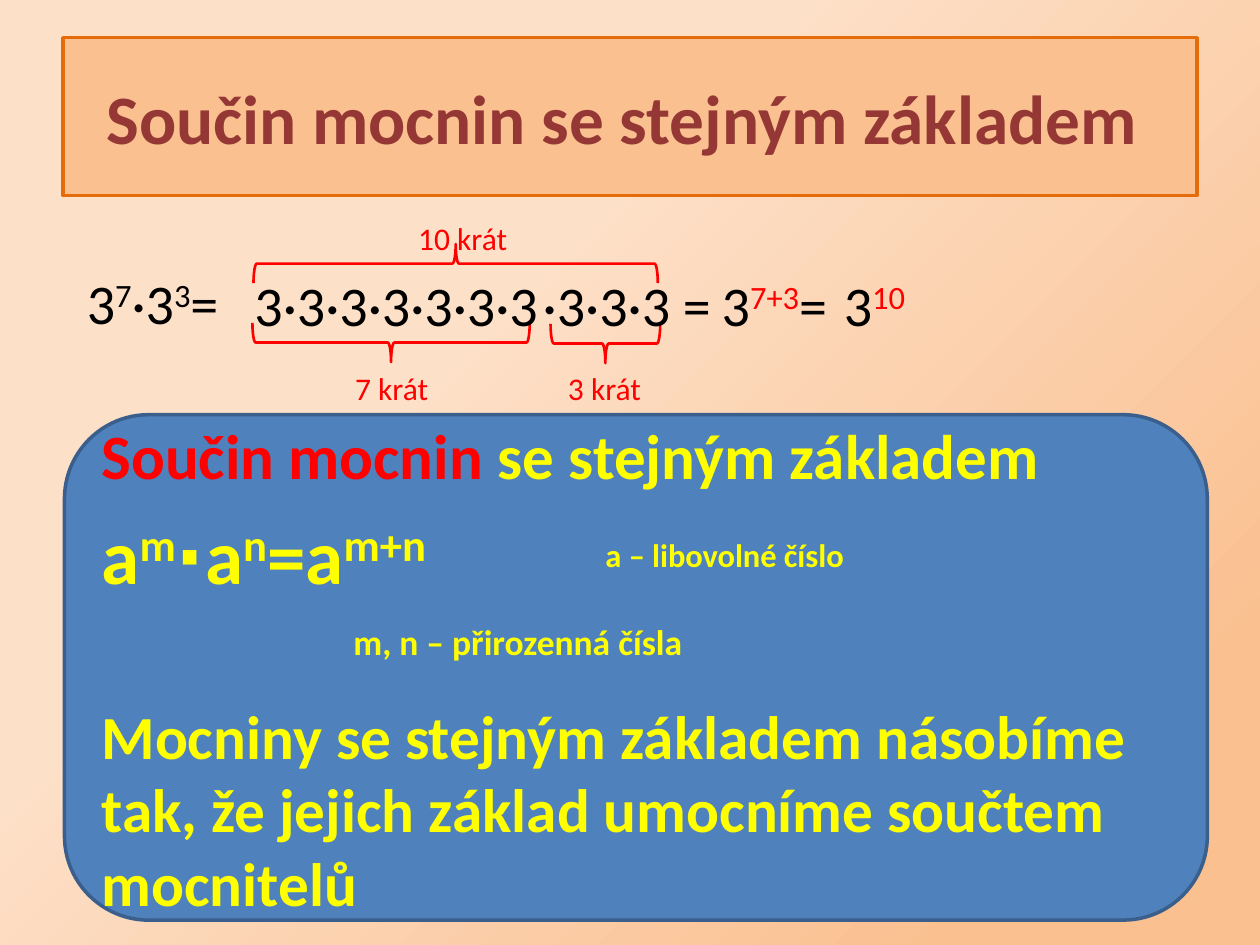
from pptx import Presentation
from pptx.dml.color import RGBColor
from pptx.enum.shapes import MSO_SHAPE
from pptx.enum.text import MSO_ANCHOR, PP_ALIGN
from pptx.util import Cm, Pt

ROUNDED = MSO_SHAPE.ROUNDED_RECTANGLE
BRACE = MSO_SHAPE.LEFT_BRACE
MIDDLE = MSO_ANCHOR.MIDDLE
LEFT, CENTER = PP_ALIGN.LEFT, PP_ALIGN.CENTER

BLACK = RGBColor(0x00, 0x00, 0x00)
RED = RGBColor(0xFF, 0x00, 0x00)
YELLOW = RGBColor(0xFF, 0xFF, 0x00)
BROWN = RGBColor(0x95, 0x37, 0x35)
CREAM = RGBColor(0xFD, 0xE0, 0xC8)
PEACH = RGBColor(0xFA, 0xC0, 0x90)
ORANGE = RGBColor(0xE4, 0x6C, 0x0A)
BLUE = RGBColor(0x4F, 0x81, 0xBD)
DARK_BLUE = RGBColor(0x3A, 0x5F, 0x8C)


def add_runs(paragraph, runs, size, bold=False):
    paragraph.font.name = "Calibri"
    paragraph.font.size = Pt(size)
    paragraph.font.bold = bold
    for text, color, raised in runs:
        run = paragraph.add_run()
        run.text = text
        run.font.name = "Calibri"
        run.font.size = Pt(size)
        run.font.color.rgb = color
        if raised:
            run.font._element.set("baseline", "30000")


def add_outlined(kind, box, line_color, line_width, fill=None):
    shape = slide.shapes.add_shape(kind, *map(Cm, box))
    shape.shadow.inherit = False
    shape.line.color.rgb = line_color
    shape.line.width = Pt(line_width)
    if fill is None:
        shape.fill.background()
    else:
        shape.fill.solid()
        shape.fill.fore_color.rgb = fill
    return shape


presentation = Presentation()
presentation.slide_width = Cm(25.4)
presentation.slide_height = Cm(19.05)
slide = presentation.slides.add_slide(presentation.slide_layouts[6])

background = slide.background.fill
background.gradient()
background.gradient_angle = 315
for stop, position, color in zip(background.gradient_stops, (0.36, 0.86), (CREAM, PEACH)):
    stop.position = position
    stop.color.rgb = color

title = add_outlined(ROUNDED, (1.27, 0.76, 22.86, 3.18), ORANGE, 2, PEACH)
title.adjustments[0] = 0
title.text_frame.word_wrap = True
title.text_frame.vertical_anchor = MIDDLE
title_paragraph = title.text_frame.paragraphs[0]
title_paragraph.alignment = CENTER
add_runs(title_paragraph, [("Součin mocnin se stejným základem ", BROWN, False)], 39.6, True)

rule_lines = [
    (36, [("Součin mocnin", RED, False), (" se stejným základem", YELLOW, False)]),
    (44, [("a", YELLOW, False), ("m", YELLOW, True), ("∙a", YELLOW, False),
          ("n", YELLOW, True), ("=a", YELLOW, False), ("m+n", YELLOW, True)]),
    (35, [("\t\t\t\tm, n – přirozenná čísla", YELLOW, True)]),
    (35, [("Mocniny se stejným základem násobíme tak, že jejich základ "
           "umocníme součtem mocnitelů", YELLOW, False)]),
]
rule = add_outlined(ROUNDED, (1.3, 8.36, 23.04, 10.19), DARK_BLUE, 2, BLUE)
frame = rule.text_frame
frame.word_wrap = True
frame.vertical_anchor = MIDDLE
for index, (size, runs) in enumerate(rule_lines):
    paragraph = frame.add_paragraph() if index else frame.paragraphs[0]
    paragraph.alignment = LEFT
    paragraph.space_before = Pt(round(size * 0.2))
    add_runs(paragraph, runs, size, True)
add_runs(frame.paragraphs[1], [("\t\t\ta – libovolné číslo", YELLOW, True)], 32, True)

for left, top, height, rotation in [
    (7.49, 4.11, 5.59, 270),
    (11.81, 5.82, 2.21, 270),
    (8.79, 1.24, 8.15, 90),
]:
    brace = add_outlined(BRACE, (left, top, 0.79, height), RED, 1.5)
    brace.rotation = rotation

for left, top, width, height, size, wrap, runs in [
    (4.88, 5.33, 6.32, 1.63, 32, True, [("3·3·3·3·3·3·3", BLACK, False)]),
    (6.91, 7.32, 2.01, 1.02, 18, False, [("7 krát", RED, False)]),
    (11.2, 7.32, 2.01, 1.02, 18, False, [("3 krát", RED, False)]),
    (8.18, 4.29, 2.31, 1.02, 18, False, [("10 krát", RED, False)]),
    (14.3, 5.33, 3, 1.63, 32, True,
     [("3", BLACK, False), ("7+3", RED, True), ("=", BLACK, False)]),
    (1.5, 5.28, 3.61, 1.63, 32, True,
     [("3", BLACK, False), ("7", BLACK, True), ("·3", BLACK, False),
      ("3", BLACK, True), ("=", BLACK, False)]),
    (10.69, 5.33, 4.19, 1.63, 32, True, [("·3·3·3 =", BLACK, False)]),
    (16.76, 5.33, 1.93, 1.63, 32, True, [("3", BLACK, False), ("10", RED, True)]),
]:
    label = slide.shapes.add_textbox(Cm(left), Cm(top), Cm(width), Cm(height))
    label.text_frame.word_wrap = wrap
    add_runs(label.text_frame.paragraphs[0], runs, size)

presentation.save("out.pptx")
